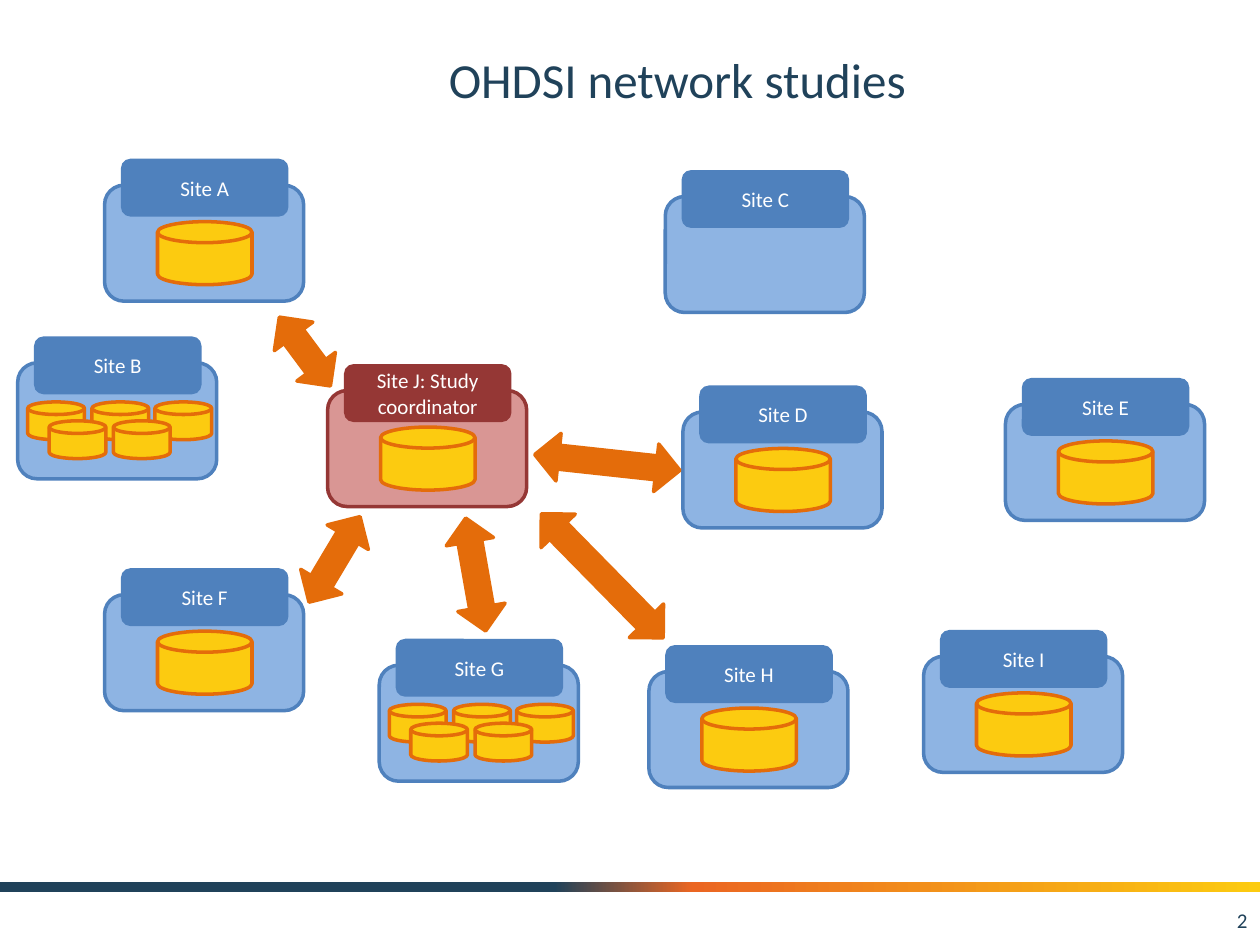
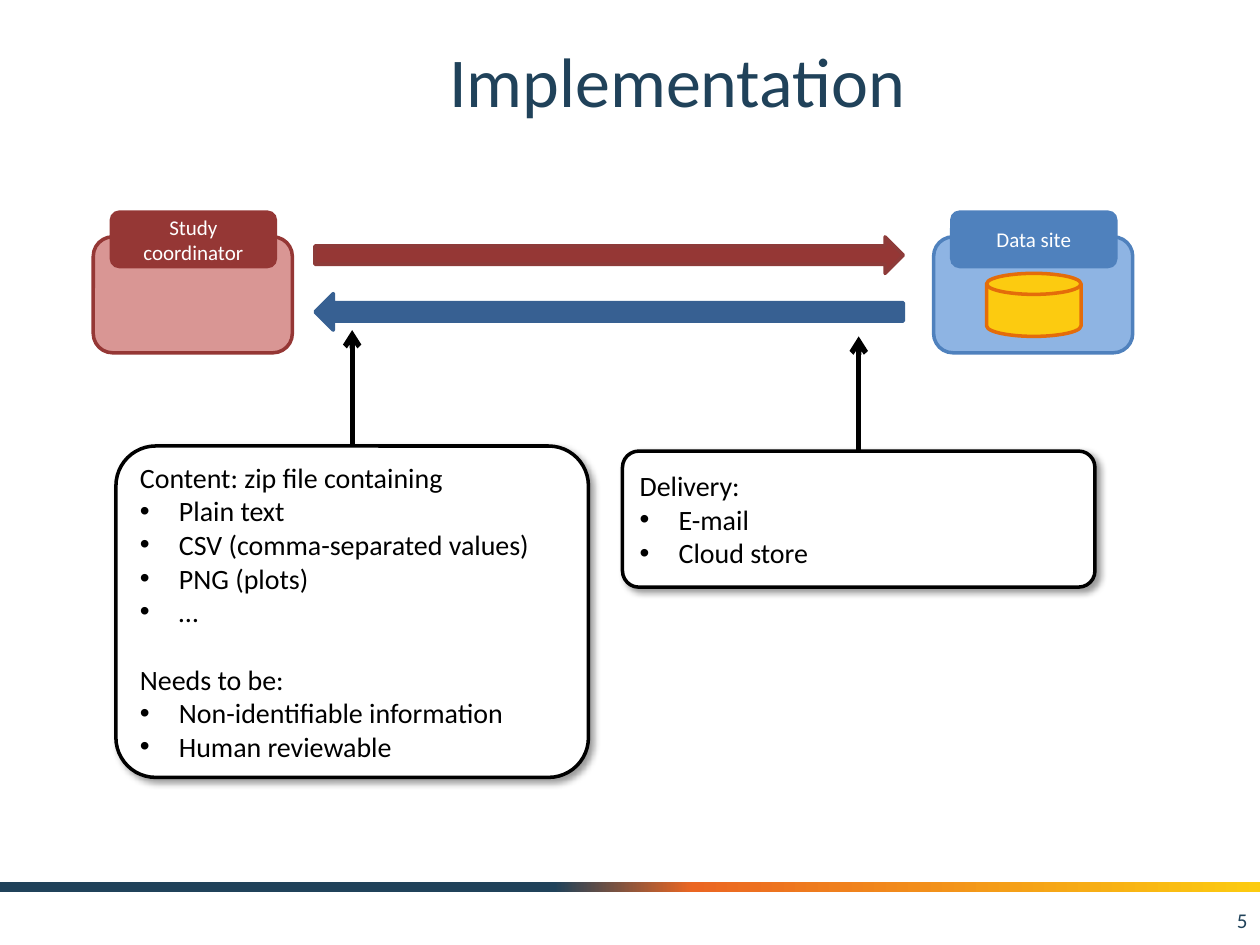
"""Build two slides on network studies and how their results are exchanged."""
from lxml import etree
from pptx import Presentation
from pptx.dml.color import RGBColor
from pptx.enum.shapes import MSO_CONNECTOR, MSO_SHAPE
from pptx.enum.text import MSO_ANCHOR, PP_ALIGN
from pptx.oxml import parse_xml
from pptx.oxml.ns import nsdecls, qn
from pptx.util import Inches, Pt

ROUNDED = MSO_SHAPE.ROUNDED_RECTANGLE
DISK = MSO_SHAPE.FLOWCHART_MAGNETIC_DISK
BAND = MSO_SHAPE.RECTANGLE
ONE_WAY = MSO_SHAPE.RIGHT_ARROW
TWO_WAY = MSO_SHAPE.LEFT_RIGHT_ARROW
STRAIGHT = MSO_CONNECTOR.STRAIGHT
LEFT, CENTER, RIGHT = PP_ALIGN.LEFT, PP_ALIGN.CENTER, PP_ALIGN.RIGHT
MIDDLE = MSO_ANCHOR.MIDDLE

NAVY = RGBColor(0x20, 0x42, 0x5A)
FLAME = RGBColor(0xEB, 0x66, 0x22)
YELLOW = RGBColor(0xFC, 0xCB, 0x10)
ORANGE = RGBColor(0xE4, 0x6C, 0x0A)
BLUE = RGBColor(0x4F, 0x81, 0xBD)
PALE_BLUE = RGBColor(0x8E, 0xB4, 0xE3)
DEEP_BLUE = RGBColor(0x37, 0x60, 0x92)
RED = RGBColor(0x95, 0x37, 0x35)
RED_EDGE = RGBColor(0x8E, 0x3B, 0x39)
PINK = RGBColor(0xD9, 0x96, 0x94)
WHITE = RGBColor(0xFF, 0xFF, 0xFF)
BLACK = RGBColor(0x00, 0x00, 0x00)

FONT = "Calibri"
TITLE_ONLY = 5
BAND_STOPS = ((44, NAVY), (55, FLAME), (100, YELLOW))
SITE_COLORS = (PALE_BLUE, BLUE)
COORDINATOR_COLORS = (PINK, RED)

ONE_DISK = ((0.42, 0.29, 0.75, 0.5),)
FIVE_DISKS = tuple(
    (x, y, 0.45, 0.3)
    for y, columns in ((0.31, (0.08, 0.59, 1.09)), (0.46, (0.25, 0.76)))
    for x in columns
)

NETWORK_SITES = (
    ("Site J: Study coordinator", 2.6, 3.1, ONE_DISK, COORDINATOR_COLORS),
    ("Site G", 3.01, 5.28, FIVE_DISKS, SITE_COLORS),
    ("Site C", 5.28, 1.56, (), SITE_COLORS),
    ("Site F", 0.83, 4.72, ONE_DISK, SITE_COLORS),
    ("Site D", 5.42, 3.27, ONE_DISK, SITE_COLORS),
    ("Site E", 7.98, 3.21, ONE_DISK, SITE_COLORS),
    ("Site H", 5.15, 5.33, ONE_DISK, SITE_COLORS),
    ("Site I", 7.33, 5.21, ONE_DISK, SITE_COLORS),
    ("Site A", 0.83, 1.47, ONE_DISK, SITE_COLORS),
    ("Site B", 0.14, 2.88, FIVE_DISKS, SITE_COLORS),
)
NETWORK_ARROWS = (
    (2.08, 2.6, 0.68, 53.4),
    (4.24, 3.48, 1.16, 186.2),
    (3.32, 4.37, 0.91, 80),
    (2.26, 4.25, 0.79, 120.8),
    (4.09, 4.38, 1.38, 225.5),
)
CONTENT_SECTIONS = (
    ("Content: zip file containing",
     ("Plain text", "CSV (comma-separated values)", "PNG (plots)", "…")),
    ("Needs to be:", ("Non-identifiable information", "Human reviewable")),
)
DELIVERY_SECTIONS = (("Delivery:", ("E-mail", "Cloud store")),)


def write(para, text, size=12, color=WHITE, align=CENTER, bullet=False, before=0):
    """Write formatted text into a paragraph."""
    if bullet:
        properties = para._p.get_or_add_pPr()
        properties.set("marL", str(Inches(0.31)))
        properties.set("indent", str(-Inches(0.31)))
        etree.SubElement(properties, qn("a:buFont")).set("typeface", "Arial")
        etree.SubElement(properties, qn("a:buChar")).set("char", "•")
    para.alignment = align
    if before:
        para.space_before = Pt(before)
    span = para.add_run()
    span.text = text
    span.font.name = FONT
    span.font.size = Pt(size)
    span.font.color.rgb = color


def add_block(page, kind, box, fill, line=None, rotation=0):
    """Add a flat preset shape with a plain fill and an optional outline."""
    block = page.shapes.add_shape(kind, *map(Inches, box))
    block.shadow.inherit = False
    block.rotation = rotation
    block.fill.solid()
    block.fill.fore_color.rgb = fill
    if line is None:
        block.line.fill.background()
    else:
        block.line.color.rgb = line
        block.line.width = Pt(2)
    return block


def add_band(page):
    """Draw the gradient band above the footer."""
    band = add_block(page, BAND, (0, 7, 10, 0.08), NAVY)
    stops = "".join(
        f'<a:gs pos="{position * 1000}"><a:srgbClr val="{color}"/></a:gs>'
        for position, color in BAND_STOPS
    )
    gradient = parse_xml(
        f'<a:gradFill {nsdecls("a")}><a:gsLst>{stops}</a:gsLst>'
        '<a:lin ang="0" scaled="0"/></a:gradFill>'
    )
    properties = band._element.spPr
    properties.replace(properties.find(qn("a:solidFill")), gradient)


def add_page(deck, title, title_size, number):
    """Add a slide with its title, footer band and page number."""
    page = deck.slides.add_slide(deck.slide_layouts[TITLE_ONLY])
    add_band(page)
    heading = page.shapes.title
    heading.left, heading.top, heading.width, heading.height = map(
        Inches, (1.25, 0.17, 8.25, 0.92))
    heading.text_frame.vertical_anchor = MIDDLE
    write(heading.text_frame.paragraphs[0], title, size=title_size, color=NAVY)
    footer = page.shapes.add_textbox(*map(Inches, (7.67, 7.1, 2.33, 0.4))).text_frame
    footer.word_wrap = True
    footer.vertical_anchor = MIDDLE
    write(footer.paragraphs[0], number, color=NAVY, align=RIGHT)
    return page


def add_site(page, name, left, top, disks, colors):
    """Draw a site with its name tab and its databases."""
    fill, accent = colors
    add_block(page, ROUNDED, (left, top, 1.58, 0.92), fill, accent)
    tab = add_block(page, ROUNDED, (left + 0.13, top - 0.21, 1.33, 0.46), accent)
    tab.text_frame.word_wrap = True
    tab.text_frame.vertical_anchor = MIDDLE
    write(tab.text_frame.paragraphs[0], name)
    for x, y, width, height in disks:
        add_block(page, DISK, (left + x, top + y, width, height), YELLOW, ORANGE)


def add_callout(page, box, sections, pointer_top):
    """Draw a shadowed note whose pointer rises from its top side."""
    left, top, width, _ = box
    note = add_block(page, ROUNDED, box, WHITE, BLACK)
    note.adjustments[0] = 0.12
    shadow = parse_xml(
        f'<a:outerShdw {nsdecls("a")} blurRad="{Pt(4)}" dist="{Pt(3)}" dir="2700000" '
        'algn="tl" rotWithShape="0"><a:srgbClr val="000000">'
        '<a:alpha val="40000"/></a:srgbClr></a:outerShdw>'
    )
    note._element.spPr.find(qn("a:effectLst")).append(shadow)
    frame = note.text_frame
    frame.word_wrap = True
    frame.vertical_anchor = MIDDLE
    style = {"size": 16, "color": BLACK, "align": LEFT}
    for index, (heading, items) in enumerate(sections):
        para = frame.add_paragraph() if index else frame.paragraphs[0]
        write(para, heading, before=19.5 if index else 0, **style)
        for item in items:
            write(frame.add_paragraph(), item, bullet=True, **style)

    middle = Inches(left + width / 2)
    pointer = page.shapes.add_connector(
        STRAIGHT, middle, Inches(top), middle, Inches(pointer_top))
    pointer.begin_connect(note, 0)
    pointer.line.color.rgb = BLACK
    pointer.line.width = Pt(3)
    etree.SubElement(pointer.line._get_or_add_ln(), qn("a:tailEnd")).set("type", "arrow")
    etree.SubElement(pointer._element.spPr, qn("a:effectLst"))


def build_network(deck):
    """Build the slide of sites around the study coordinator."""
    page = add_page(deck, "OHDSI network studies", 28, "2")
    for site in NETWORK_SITES:
        add_site(page, *site)
    for left, top, length, rotation in NETWORK_ARROWS:
        add_block(page, TWO_WAY, (left, top, length, 0.38), ORANGE, ORANGE, rotation)


def build_implementation(deck):
    """Build the slide of the exchange between coordinator and data site."""
    page = add_page(deck, "Implementation", 40, "5")
    add_site(page, "Study coordinator", 0.74, 1.88, (), COORDINATOR_COLORS)
    add_site(page, "Data site", 7.41, 1.88, ONE_DISK, SITE_COLORS)
    add_block(page, ONE_WAY, (2.5, 1.88, 4.67, 0.29), RED, RED_EDGE)
    add_block(page, ONE_WAY, (2.5, 2.33, 4.67, 0.29), DEEP_BLUE, DEEP_BLUE, 180)
    add_callout(page, (0.92, 3.54, 3.75, 2.63), CONTENT_SECTIONS, 2.62)
    add_callout(page, (4.94, 3.58, 3.75, 1.08), DELIVERY_SECTIONS, 2.67)


def main():
    """Create and save the deck."""
    deck = Presentation()
    deck.slide_width, deck.slide_height = Inches(10), Inches(7.5)
    build_network(deck)
    build_implementation(deck)
    deck.save("out.pptx")


if __name__ == "__main__":
    main()
